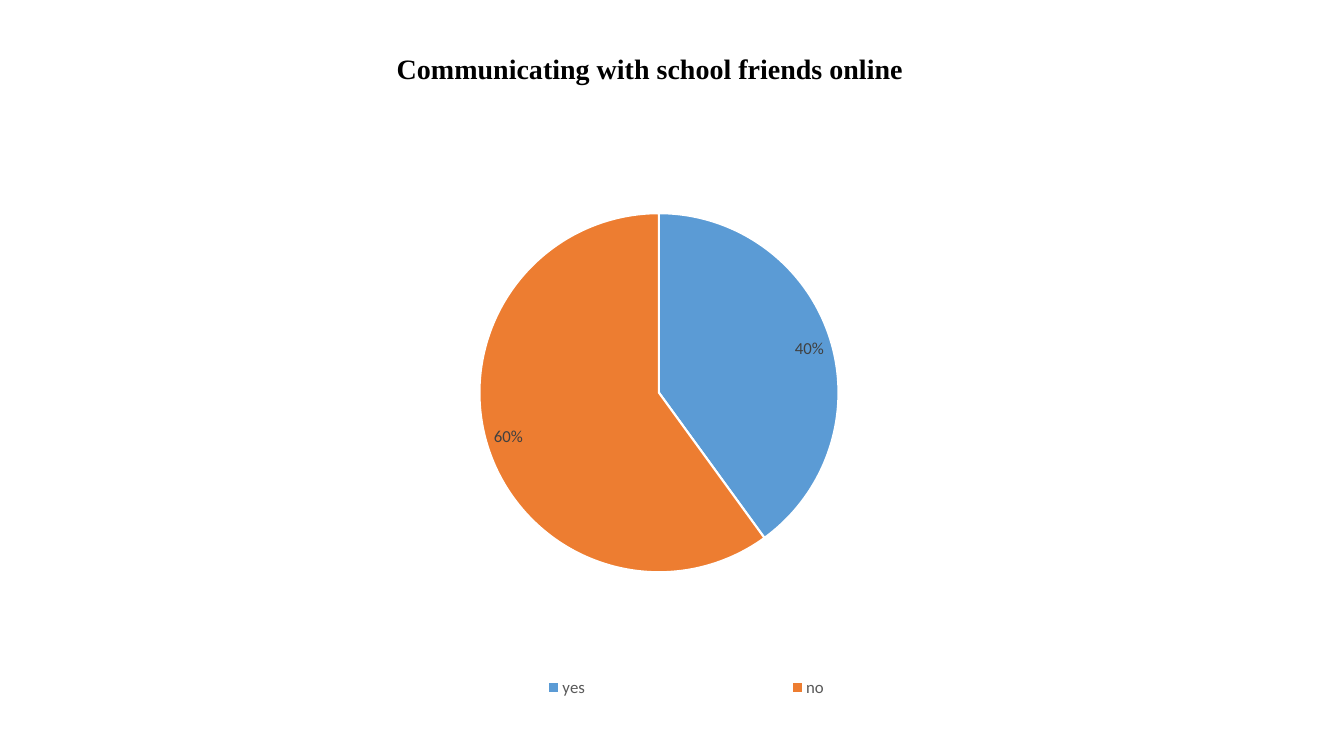
"""Build a slide with a pie chart on communicating with school friends online."""
import pptx
import pptx.chart.data
import pptx.dml.color
import pptx.enum.chart
import pptx.enum.text
import pptx.oxml
import pptx.oxml.ns
import pptx.util

Cm = pptx.util.Cm
Pt = pptx.util.Pt
RGBColor = pptx.dml.color.RGBColor

BLACK = RGBColor(0x00, 0x00, 0x00)
WHITE = RGBColor(0xFF, 0xFF, 0xFF)
BLUE = RGBColor(0x5B, 0x9B, 0xD5)
ORANGE = RGBColor(0xED, 0x7D, 0x31)
LABEL_GRAY = RGBColor(0x40, 0x40, 0x40)
LEGEND_GRAY = RGBColor(0x59, 0x59, 0x59)


def set_font(font, name, size, color):
    font.name = name
    font.size = Pt(size)
    font.color.rgb = color


def place(parent, index, target, x, y, width, height):
    for old_layout in parent.findall(pptx.oxml.ns.qn("c:layout")):
        parent.remove(old_layout)
    target_xml = f'<c:layoutTarget val="{target}"/>' if target else ""
    parent.insert(index, pptx.oxml.parse_xml(
        f'<c:layout {pptx.oxml.ns.nsdecls("c")}><c:manualLayout>{target_xml}'
        '<c:xMode val="edge"/><c:yMode val="edge"/>'
        f'<c:x val="{x}"/><c:y val="{y}"/><c:w val="{width}"/><c:h val="{height}"/>'
        '</c:manualLayout></c:layout>'))


presentation = pptx.Presentation()
presentation.slide_width = Cm(33.87)
presentation.slide_height = Cm(19.05)
slide = presentation.slides.add_slide(presentation.slide_layouts[6])

title = slide.shapes.add_textbox(Cm(5.46), Cm(1.17), Cm(21.84), Cm(1.12))
title.text_frame.word_wrap = True
title.text_frame.auto_size = pptx.enum.text.MSO_AUTO_SIZE.SHAPE_TO_FIT_TEXT
paragraph = title.text_frame.paragraphs[0]
paragraph.alignment = pptx.enum.text.PP_ALIGN.CENTER
run = paragraph.add_run()
run.text = "Communicating with school friends online"
set_font(run.font, "Times New Roman", 20, BLACK)
run.font.bold = True

chart_data = pptx.chart.data.CategoryChartData(number_format='0"%"')
chart_data.categories = ["yes", "no "]
chart_data.add_series("Series 1", (40, 60))
chart = slide.shapes.add_chart(
    pptx.enum.chart.XL_CHART_TYPE.PIE,
    Cm(5.77), Cm(2.62), Cm(21.23), Cm(15.82), chart_data).chart
chart.has_title = False
set_font(chart.font, "Calibri", 10, BLACK)

plot = chart.plots[0]
plot.vary_by_categories = True
for index, color in enumerate((BLUE, ORANGE)):
    slice_format = plot.series[0].points[index].format
    slice_format.fill.solid()
    slice_format.fill.fore_color.rgb = color
    slice_format.line.color.rgb = WHITE
    slice_format.line.width = Pt(1.5)

labels = plot.series[0].data_labels
labels.show_value = True
labels.show_percentage = False
labels.number_format = '0"%"'
labels.number_format_is_linked = False
labels.position = pptx.enum.chart.XL_LABEL_POSITION.INSIDE_END
set_font(labels.font, "Calibri", 12, LABEL_GRAY)

chart.has_legend = True
legend = chart.legend
legend.position = pptx.enum.chart.XL_LEGEND_POSITION.BOTTOM
legend.include_in_layout = False
set_font(legend.font, "Calibri", 12, LEGEND_GRAY)

plot_area = chart._chartSpace.xpath("c:chart/c:plotArea")[0]
place(plot_area, 0, "inner", 0.264, 0.174, 0.493, 0.572)
place(legend._element, 1, None, 0.14, 0.89, 0.81, 0.08)

presentation.save("out.pptx")
